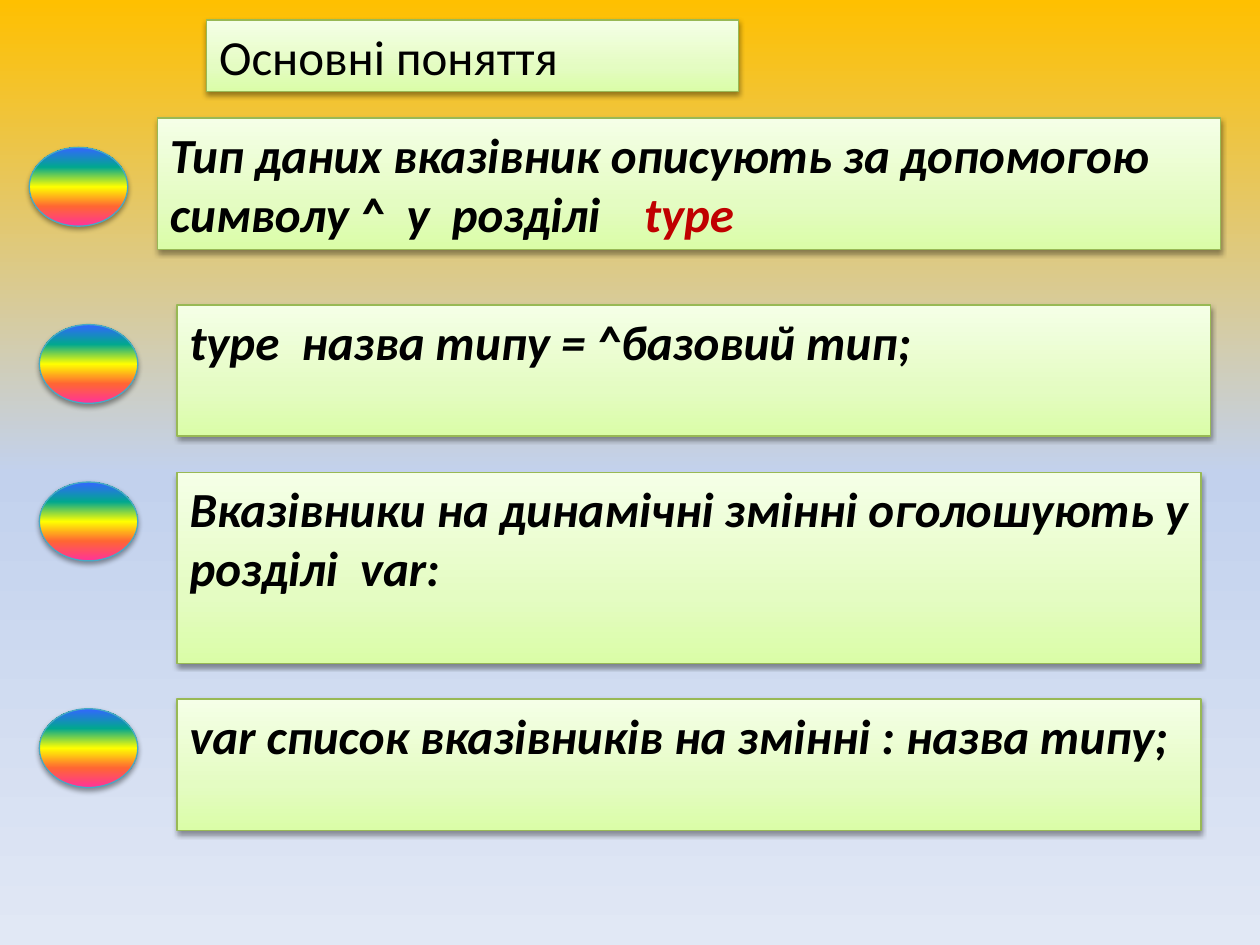
from dataclasses import dataclass

from lxml.etree import SubElement
from pptx import Presentation
from pptx.dml.color import RGBColor
from pptx.enum.shapes import MSO_SHAPE
from pptx.enum.text import MSO_ANCHOR, MSO_AUTO_SIZE, PP_ALIGN
from pptx.oxml.ns import qn
from pptx.util import Pt


@dataclass(frozen=True)
class Theme:
    font: str = "Calibri"
    size: int = 28
    text: str = "000000"
    keyword: str = "C00000"
    panel_line: str = "98B955"
    oval_line: str = "46AAC5"
    shadow: str = "000000"
    sky: tuple = ((0, "FFC000"), (50, "C2D1ED"), (100, "E1E8F5"))
    panel: tuple = ((0, "DAFDA7"), (35, "E4FCC2"), (100, "F5FFE7"))
    rainbow: tuple = ((0, "FF3399"), (25, "FF6633"), (50, "FFFF00"),
                      (75, "01A78F"), (100, "3366FF"))


THEME = Theme()
TITLE_BOX = (118, 11.5, 304, 41)
OVAL_SIZE = (56.25, 45)
KEYWORD_TAB = 271

# Panel box, oval position, then runs of text with their colour
ROWS = [
    ((90, 67.5, 607.5, 75), (16.75, 84.25),
     [("Тип даних вказівник описують за допомогою символу ^  у  розділі\t", THEME.text),
      ("type", THEME.keyword)]),
    ((101.25, 174.25, 590.5, 75), (22.5, 185.5),
     [("type  назва типу = ^базовий тип;", THEME.text)]),
    ((101.25, 270, 585, 109), (22.5, 275.5),
     [("Вказівники на динамічні змінні оголошують у розділі  var:", THEME.text)]),
    ((101.25, 399.5, 585, 75), (22.5, 405),
     [("var список вказівників на змінні : назва типу;", THEME.text)]),
]


def set_gradient(fill, element, stops, angle):
    """Give the fill its stops; the angle is clockwise in degrees."""
    fill.gradient()
    grad = element.find(".//" + qn("a:gradFill"))
    gs_list = grad.find(qn("a:gsLst"))
    for gs in list(gs_list):
        gs_list.remove(gs)
    for position, color in stops:
        gs = SubElement(gs_list, qn("a:gs"), pos=str(position * 1000))
        SubElement(gs, qn("a:srgbClr"), val=color)
    grad.find(qn("a:lin")).set("ang", str(angle * 60000))


def style_shape(sp, stops, line):
    set_gradient(sp.fill, sp._element, stops, 270)
    sp.line.color.rgb = RGBColor.from_string(line)
    sp.line.width = Pt(0.75)
    # Soft shadow straight below
    sp.shadow.inherit = False
    effects = sp._element.spPr.find(qn("a:effectLst"))
    shadow = SubElement(effects, qn("a:outerShdw"), blurRad=str(Pt(3.1)),
                        dist=str(Pt(1.6)), dir="5400000", rotWithShape="0")
    color = SubElement(shadow, qn("a:srgbClr"), val=THEME.shadow)
    SubElement(color, qn("a:alpha"), val="38000")


def set_text(sp, runs, bold=False, italic=False, anchor=MSO_ANCHOR.TOP, tab=None):
    tf = sp.text_frame
    tf.word_wrap = True
    tf.auto_size = MSO_AUTO_SIZE.NONE
    tf.vertical_anchor = anchor
    p = tf.paragraphs[0]
    p.alignment = PP_ALIGN.LEFT
    if tab:
        tabs = SubElement(p._p.get_or_add_pPr(), qn("a:tabLst"))
        SubElement(tabs, qn("a:tab"), pos=str(Pt(tab)), algn="l")
    for text, color in runs:
        r = p.add_run()
        r.text = text
        r.font.name = THEME.font
        r.font.size = Pt(THEME.size)
        r.font.bold, r.font.italic = bold, italic
        r.font.color.rgb = RGBColor.from_string(color)


def add_title(s, box):
    sp = s.shapes.title
    sp.left, sp.top, sp.width, sp.height = map(Pt, box)
    style_shape(sp, THEME.panel, THEME.panel_line)
    set_text(sp, [("Основні поняття", THEME.text)])


def add_row(s, box, oval_at, runs):
    # Text panel
    sp = s.shapes.add_shape(MSO_SHAPE.RECTANGLE, *map(Pt, box))
    style_shape(sp, THEME.panel, THEME.panel_line)
    tab = KEYWORD_TAB if len(runs) > 1 else None
    set_text(sp, runs, bold=True, italic=True, tab=tab)
    # Rainbow marker
    oval = s.shapes.add_shape(MSO_SHAPE.OVAL, *map(Pt, oval_at + OVAL_SIZE))
    style_shape(oval, THEME.rainbow, THEME.oval_line)


def main():
    prs = Presentation()
    prs.slide_width, prs.slide_height = Pt(720), Pt(540)
    s = prs.slides.add_slide(prs.slide_layouts[5])
    set_gradient(s.background.fill, s._element, THEME.sky, 90)
    add_title(s, TITLE_BOX)
    for box, oval_at, runs in ROWS:
        add_row(s, box, oval_at, runs)
    prs.save("out.pptx")


if __name__ == "__main__":
    main()
